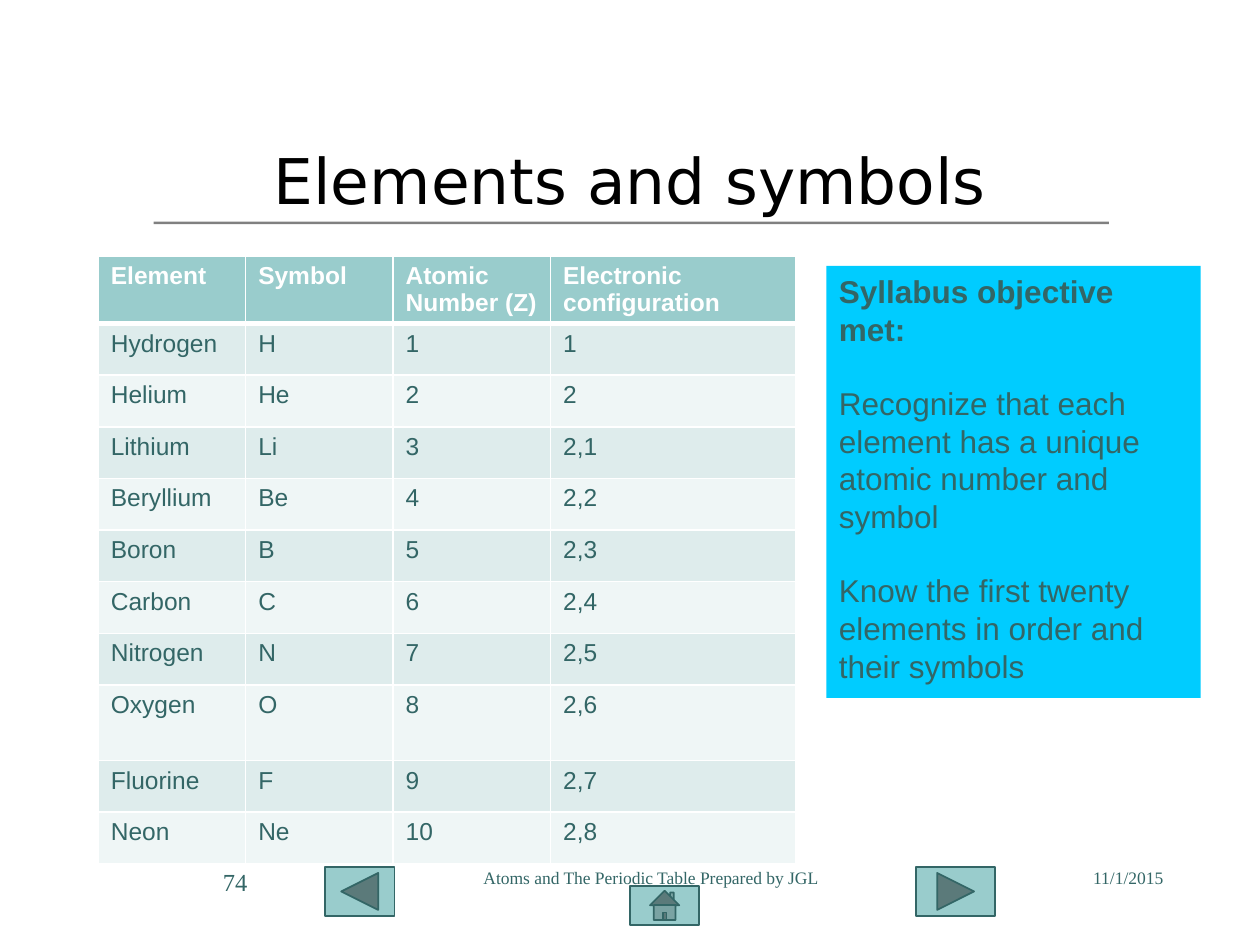
"""Build the slide listing the first ten elements and their symbols."""
from lxml.etree import SubElement
from pptx import Presentation
from pptx.dml.color import RGBColor
from pptx.enum.shapes import MSO_SHAPE as SHAPE
from pptx.enum.text import MSO_ANCHOR as ANCHOR, PP_ALIGN as ALIGN
from pptx.oxml.ns import qn
from pptx.util import Inches, Pt

BLACK = RGBColor(0, 0, 0)
WHITE = RGBColor(255, 255, 255)
GRAY = RGBColor(0x80, 0x80, 0x80)
TEAL = RGBColor(0x33, 0x66, 0x66)
AQUA = RGBColor(0x99, 0xCC, 0xCC)
CYAN = RGBColor(0x00, 0xCC, 0xFF)
BANDS = [RGBColor(0xDE, 0xEC, 0xEC), RGBColor(0xEF, 0xF6, 0xF6)]

TITLE = "Elements and symbols"
HEADER = ("Element", "Symbol", "Atomic Number (Z)", "Electronic configuration")
ELEMENTS = [
    ("Hydrogen", "H", "1"), ("Helium", "He", "2"),
    ("Lithium", "Li", "2,1"), ("Beryllium", "Be", "2,2"),
    ("Boron", "B", "2,3"), ("Carbon", "C", "2,4"),
    ("Nitrogen", "N", "2,5"), ("Oxygen", "O", "2,6"),
    ("Fluorine", "F", "2,7"), ("Neon", "Ne", "2,8"),
]
COLUMN_WIDTHS = (1.17, 1.17, 1.25, 1.95)
ROW_HEIGHT, TALL_ROW_HEIGHT, TALL_ROW = 0.41, 0.6, 8
OBJECTIVES = [
    ("Syllabus objective met:", True, 0),
    ("Recognize that each element has a unique atomic number and symbol", False, 20.7),
    ("Know the first twenty", False, 20.7),
    ("elements in order and their symbols", False, 0),
]
BUTTONS = [
    (SHAPE.ACTION_BUTTON_BACK_OR_PREVIOUS, (2.58, 6.88, 0.55, 0.39)),
    (SHAPE.ACTION_BUTTON_FORWARD_OR_NEXT, (7.27, 6.88, 0.63, 0.39)),
    (SHAPE.ACTION_BUTTON_HOME, (5, 7.03, 0.55, 0.31)),
]
FOOTERS = [
    ("11/1/2015", (7.25, 6.83, 2.08, 0.5), 10, ALIGN.RIGHT),
    ("Atoms and The Periodic Table Prepared by JGL", (3.58, 6.83, 3.17, 0.5), 10, ALIGN.CENTER),
    ("74", (1.67, 6.83, 1.42, 0.5), 14, ALIGN.LEFT),
]


def inches(box):
    return [Inches(length) for length in box]


def style(paragraph, font_name, size, color, bold=False):
    for run in paragraph.runs:
        font = run.font
        font.name, font.size, font.bold = font_name, Pt(size), bold
        font.color.rgb = color


def add_filled_shape(slide, kind, box, color):
    shape = slide.shapes.add_shape(kind, *inches(box))
    shape.shadow.inherit = False
    shape.fill.solid()
    shape.fill.fore_color.rgb = color
    shape.line.fill.background()
    return shape


def add_title(slide):
    title = slide.shapes.title
    title.left, title.top, title.width, title.height = inches((0, 0.92, 10, 1))
    frame = title.text_frame
    frame.text = TITLE
    frame.vertical_anchor = ANCHOR.MIDDLE
    frame.paragraphs[0].alignment = ALIGN.CENTER
    style(frame.paragraphs[0], "DejaVu Sans", 36, BLACK)


def add_buttons(slide):
    for kind, box in BUTTONS:
        button = add_filled_shape(slide, kind, box, AQUA)
        button.line.color.rgb = TEAL
        button.line.width = Pt(1)


def set_borders(cell, bottom_width):
    properties = cell._tc.get_or_add_tcPr()
    for side, width in (("L", 1), ("R", 1), ("T", 1), ("B", bottom_width)):
        line = SubElement(properties, qn(f"a:ln{side}"), w=str(Pt(width)))
        fill = SubElement(line, qn("a:solidFill"))
        SubElement(fill, qn("a:srgbClr"), val=str(WHITE))


def add_element_table(slide):
    rows = [HEADER] + [
        (name, symbol, str(number), configuration)
        for number, (name, symbol, configuration) in enumerate(ELEMENTS, 1)
    ]
    heights = [TALL_ROW_HEIGHT if i == TALL_ROW else ROW_HEIGHT for i in range(len(rows))]
    box = (0.78, 2.03, sum(COLUMN_WIDTHS), sum(heights))
    table = slide.shapes.add_table(len(rows), len(HEADER), *inches(box)).table
    for column, width in zip(table.columns, COLUMN_WIDTHS):
        column.width = Inches(width)
    for i, (row, values) in enumerate(zip(table.rows, rows)):
        row.height = Inches(heights[i])
        is_header = i == 0
        for cell, value in zip(row.cells, values):
            cell.text = value
            set_borders(cell, 3 if is_header else 1)
            cell.fill.solid()
            cell.fill.fore_color.rgb = AQUA if is_header else BANDS[(i - 1) % 2]
            style(cell.text_frame.paragraphs[0], "Arial", 14,
                  WHITE if is_header else TEAL, is_header)


def add_footers(slide):
    for text, box, size, alignment in FOOTERS:
        frame = slide.shapes.add_textbox(*inches(box)).text_frame
        frame.word_wrap = True
        frame.text = text
        frame.paragraphs[0].alignment = alignment
        style(frame.paragraphs[0], "Times New Roman", size, TEAL)


def add_objectives(slide):
    panel = add_filled_shape(slide, SHAPE.RECTANGLE, (6.56, 2.11, 2.97, 3.43), CYAN)
    frame = panel.text_frame
    frame.word_wrap = True
    frame.vertical_anchor = ANCHOR.TOP
    frame.text = "\n".join(text for text, _, _ in OBJECTIVES)
    for paragraph, (_, bold, space) in zip(frame.paragraphs, OBJECTIVES):
        paragraph.alignment = ALIGN.LEFT
        paragraph.space_before = Pt(space)
        style(paragraph, "Arial", 18, TEAL, bold)


def main():
    presentation = Presentation()
    presentation.slide_width, presentation.slide_height = Inches(10), Inches(7.5)
    slide = presentation.slides.add_slide(presentation.slide_layouts[5])
    add_filled_shape(slide, SHAPE.RECTANGLE, (1.22, 1.76, 7.58, 0.02), GRAY)
    add_buttons(slide)
    add_title(slide)
    add_element_table(slide)
    add_footers(slide)
    add_objectives(slide)
    presentation.save("out.pptx")


if __name__ == "__main__":
    main()
